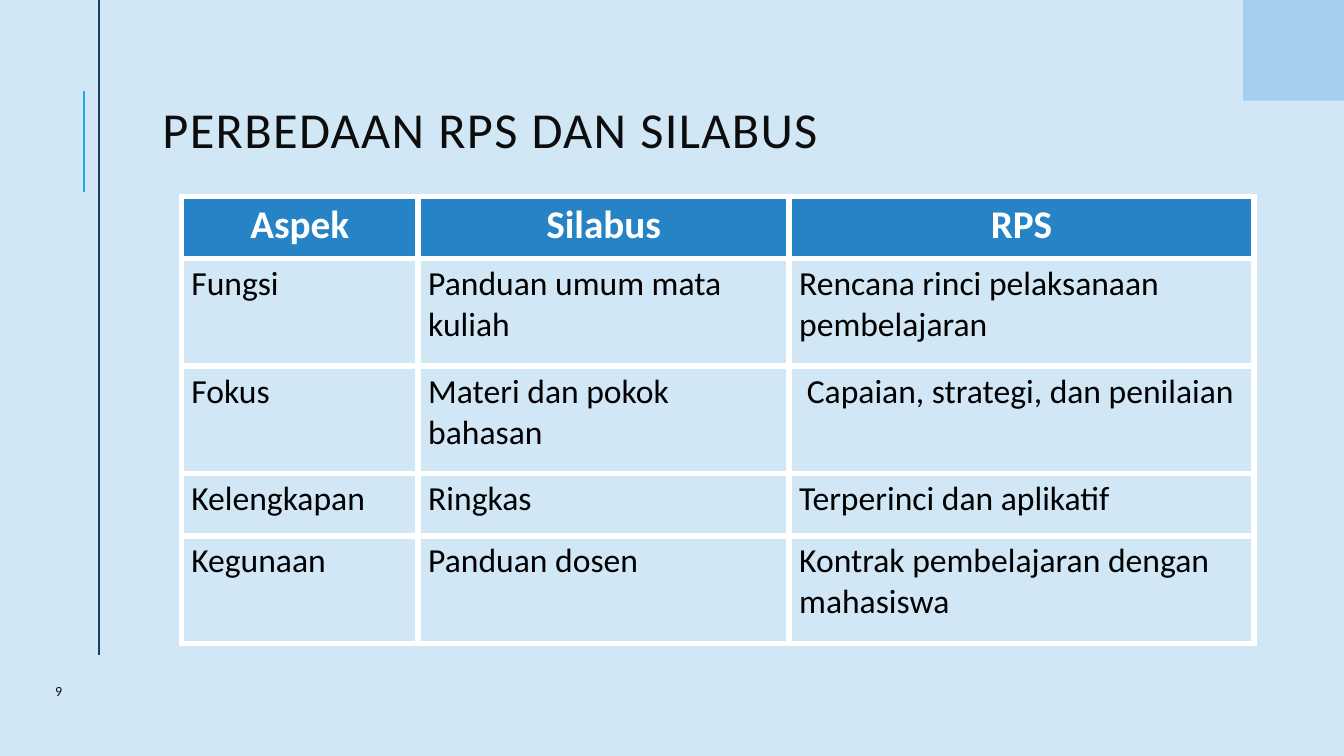
from lxml import etree
from pptx import Presentation
from pptx import util as u
from pptx.dml import color
from pptx.enum import shapes, text
from pptx.oxml import ns

INK = "0D0D0D"
SKY = "D1E7F6"
WHITE = "FFFFFF"


def rgb(value):
    """Turn a hex string into a colour."""
    return color.RGBColor.from_string(value)


class SlideBuilder:
    """Hold the style and the current slide."""

    font = "Calibri"

    def __init__(self, deck, background):
        """Add a title-only slide with a plain background."""
        self.slide = deck.slides.add_slide(deck.slide_layouts[5])
        self.slide.background.fill.solid()
        self.slide.background.fill.fore_color.rgb = rgb(background)

    def set_words(self, frame, words, size, ink, bold=False, align=text.PP_ALIGN.LEFT):
        """Fill a text frame and format its only paragraph."""
        frame.text = words
        paragraph = frame.paragraphs[0]
        paragraph.alignment = align
        run = paragraph.runs[0]
        run.font.name = self.font
        run.font.size = u.Pt(size)
        run.font.bold = bold
        run.font.color.rgb = rgb(ink)
        return paragraph

    def title(self, words, left, top, width, height):
        """Place and format the title."""
        heading = self.slide.shapes.title
        heading.left, heading.top = u.Pt(left), u.Pt(top)
        heading.width, heading.height = u.Pt(width), u.Pt(height)
        frame = heading.text_frame
        frame.margin_left = 0
        frame.vertical_anchor = text.MSO_ANCHOR.MIDDLE
        frame.auto_size = text.MSO_AUTO_SIZE.NONE
        paragraph = self.set_words(frame, words, 36, INK)
        paragraph.line_spacing = 0.8
        paragraph.runs[0].font._element.set("spc", "100")

    def rule(self, x, top, bottom, ink):
        """Draw a vertical line."""
        line = self.slide.shapes.add_connector(
            shapes.MSO_CONNECTOR.STRAIGHT, u.Pt(x), u.Pt(top), u.Pt(x), u.Pt(bottom))
        line.line.color.rgb = rgb(ink)
        line.line.width = u.Pt(1.5)
        etree.SubElement(line._element.spPr, ns.qn("a:effectLst"))

    def block(self, left, top, width, height, fill):
        """Draw a borderless rectangle."""
        corner = self.slide.shapes.add_shape(
            shapes.MSO_SHAPE.RECTANGLE, u.Pt(left), u.Pt(top), u.Pt(width), u.Pt(height))
        corner.shadow.inherit = False
        corner.fill.solid()
        corner.fill.fore_color.rgb = rgb(fill)
        corner.line.fill.background()

    def label(self, words, left, top, width, height, size):
        """Add a vertically centred text box."""
        frame = self.slide.shapes.add_textbox(
            u.Pt(left), u.Pt(top), u.Pt(width), u.Pt(height)).text_frame
        frame.word_wrap = True
        frame.vertical_anchor = text.MSO_ANCHOR.MIDDLE
        self.set_words(frame, words, size, INK)

    def borders(self, cell, ink, width):
        """Draw all four borders of a cell."""
        properties = cell._tc.get_or_add_tcPr()
        for side in ("a:lnL", "a:lnR", "a:lnT", "a:lnB"):
            edge = etree.SubElement(properties, ns.qn(side), w=str(u.Pt(width)))
            fill = etree.SubElement(edge, ns.qn("a:solidFill"))
            etree.SubElement(fill, ns.qn("a:srgbClr"), val=ink)

    def table(self, rows, left, top, widths, heights):
        """Add a table with a coloured header row."""
        grid = self.slide.shapes.add_table(
            len(rows), len(widths), u.Pt(left), u.Pt(top),
            u.Pt(sum(widths)), u.Pt(sum(heights))).table
        grid.horz_banding = False
        for column, width in zip(grid.columns, widths):
            column.width = u.Pt(width)
        for r, (entries, height) in enumerate(zip(rows, heights)):
            grid.rows[r].height = u.Pt(height)
            for c, words in enumerate(entries):
                cell = grid.cell(r, c)
                self.borders(cell, WHITE, 4.5)
                cell.fill.solid()
                if r == 0:
                    cell.fill.fore_color.rgb = rgb("2683C6")
                    self.set_words(cell.text_frame, words, 28, WHITE, True,
                                   text.PP_ALIGN.CENTER)
                else:
                    cell.fill.fore_color.rgb = rgb(SKY)
                    self.set_words(cell.text_frame, words, 24, "000000")


def main():
    """Build and save the slide."""
    deck = Presentation()
    deck.slide_width, deck.slide_height = u.Pt(960), u.Pt(540)
    page = SlideBuilder(deck, SKY)
    page.rule(60, 65, 137, "1CADE4")
    page.rule(70.8, 0, 468, "134163")
    page.block(888, 0, 72, 72, "A3CEED")
    page.title("PERBEDAAN RPS DAN SILABUS", 116, 39.6, 720.5, 112.3)
    page.label("9", 32.4, 468, 76.3, 51, 10)
    comparison = [
        ("Aspek", "Silabus", "RPS"),
        ("Fungsi", "Panduan umum mata kuliah", "Rencana rinci pelaksanaan pembelajaran"),
        ("Fokus", "Materi dan pokok bahasan", " Capaian, strategi, dan penilaian"),
        ("Kelengkapan", "Ringkas", "Terperinci dan aplikatif"),
        ("Kegunaan", "Panduan dosen", "Kontrak pembelajaran dengan mahasiswa"),
    ]
    short, tall = 44.4, 76.8
    page.table(comparison, 129.5, 140.4, (169.2, 265, 331.9),
               (short, tall, tall, short, tall))
    deck.save("out.pptx")


if __name__ == "__main__":
    main()
